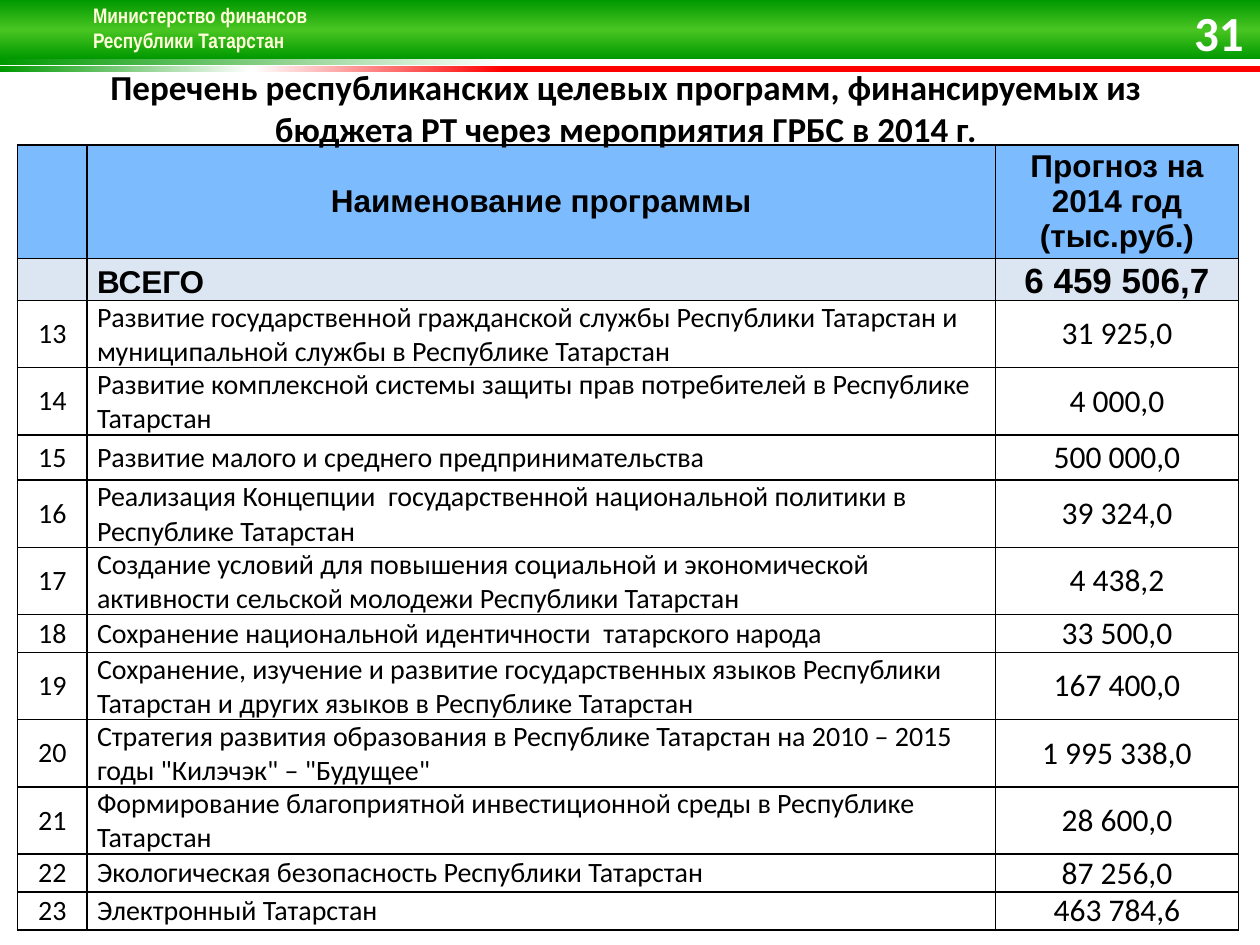
from lxml.etree import SubElement
from pptx import Presentation
from pptx.dml.color import RGBColor
from pptx.enum.shapes import MSO_SHAPE
from pptx.enum.text import MSO_ANCHOR, PP_ALIGN
from pptx.oxml import parse_xml
from pptx.oxml.ns import nsdecls, qn
from pptx.util import Inches, Pt

# Content
MINISTRY = "Министерство финансов\vРеспублики Татарстан"
TITLE = ("Перечень республиканских целевых программ, финансируемых из \v"
         "бюджета РТ через мероприятия ГРБС в 2014 г. ")
PAGE = "31"
HEADER = ("", "Наименование программы", "Прогноз на 2014 год (тыс.руб.)")
TOTAL = ("", "ВСЕГО", "6 459 506,7")
FIRST_NUMBER = 13
PROGRAMS = [  # name, forecast, row height
    ("Развитие государственной гражданской службы Республики Татарстан и "
     "муниципальной службы в Республике Татарстан", "31 925,0", 0.46),
    ("Развитие комплексной системы защиты прав потребителей в Республике Татарстан",
     "4 000,0", 0.46),
    ("Развитие малого и среднего предпринимательства", "500 000,0", 0.36),
    ("Реализация Концепции  государственной национальной политики в "
     "Республике Татарстан", "39 324,0", 0.46),
    ("Создание условий для повышения социальной и экономической активности "
     "сельской молодежи Республики Татарстан", "4 438,2", 0.46),
    ("Сохранение национальной идентичности  татарского народа", "33 500,0", 0.26),
    ("Сохранение, изучение и развитие государственных языков Республики "
     "Татарстан и других языков в Республике Татарстан", "167 400,0", 0.46),
    ("Стратегия развития образования в Республике Татарстан на 2010 – 2015 "
     "годы \"Килэчэк\" – \"Будущее\"", "1 995 338,0", 0.46),
    ("Формирование благоприятной инвестиционной среды в Республике Татарстан",
     "28 600,0", 0.46),
    ("Экологическая безопасность Республики Татарстан", "87 256,0", 0.26),
    ("Электронный Татарстан", "463 784,6", 0.26),
]
COL_WIDTHS = (0.55, 7.21, 1.93)
BANDS = [  # top, height, gradient stops, angle
    (0.47, 0.05, [(0, "FFFFFF"), (60, "FFFFFF"), (100, "009900")], 180),
    (0.52, 0.05, [(60, "FF0000"), (80, "FFFFFF"), (100, "009900")], 180),
    (0, 0.47, [(0, "009900"), (50, "49C522"), (100, "009900")], 90),
]

prs = Presentation()
prs.slide_width, prs.slide_height = Inches(10), Inches(7.5)
s = prs.slides.add_slide(prs.slide_layouts[6])


def rgb(value):
    return RGBColor.from_string(value)


def write(tf, text, size, font, color="000000", bold=False, align=PP_ALIGN.LEFT):
    tf.text = text
    p = tf.paragraphs[0]
    p.alignment = align
    for r in p.runs:
        f = r.font
        f.size, f.name, f.bold = Pt(size), font, bold
        f.color.rgb = rgb(color)
    return p


def add_text(left, top, width, height, *args, **kwargs):
    tf = s.shapes.add_textbox(*map(Inches, (left, top, width, height))).text_frame
    tf.word_wrap = True
    return tf, write(tf, *args, **kwargs)


def add_band(top, height, stops, angle):
    sp = s.shapes.add_shape(MSO_SHAPE.RECTANGLE, 0, Inches(top),
                            prs.slide_width, Inches(height))
    sp.shadow.inherit = False
    sp.line.fill.background()
    sp.fill.gradient()
    grad = sp.element.spPr.find(qn("a:gradFill"))
    gs_list = grad.find(qn("a:gsLst"))
    for gs in list(gs_list):
        gs_list.remove(gs)
    for position, color in stops:
        gs = SubElement(gs_list, qn("a:gs"), pos=str(position * 1000))
        SubElement(gs, qn("a:srgbClr"), val=color)
    grad.find(qn("a:lin")).set("ang", str(angle * 60000))


def add_borders(cell):
    tcPr = cell._tc.get_or_add_tcPr()
    for side in ("lnL", "lnR", "lnT", "lnB"):
        ln = SubElement(tcPr, qn(f"a:{side}"), w=str(Pt(1)))
        SubElement(SubElement(ln, qn("a:solidFill")), qn("a:srgbClr"), val="000000")


def fill_row(row, texts, sizes, aligns, font, bold=False, fill=None,
             anchor=MSO_ANCHOR.MIDDLE):
    for cell, text, size, align in zip(row.cells, texts, sizes, aligns):
        cell.margin_left = cell.margin_right = Inches(0.08)
        cell.margin_top = cell.margin_bottom = 0
        cell.vertical_anchor = anchor
        add_borders(cell)
        if fill:
            cell.fill.solid()
            cell.fill.fore_color.rgb = rgb(fill)
        else:
            cell.fill.background()
        write(cell.text_frame, text, size, font, bold=bold, align=align)


# Top bands with the ministry name
for band in BANDS:
    add_band(*band)
_, p = add_text(0.64, -0.03, 1.92, 0.71, MINISTRY, 12, "Arial Narrow", "FFFFD9", True)
for r in p.runs:
    r.font._element.find(qn("a:solidFill")).addnext(parse_xml(
        f'<a:effectLst {nsdecls("a")}><a:outerShdw blurRad="38100" dist="38100" '
        'dir="2700000"><a:srgbClr val="000000"><a:alpha val="43000"/></a:srgbClr>'
        '</a:outerShdw></a:effectLst>'))

# Table of programmes
heights = [0.9, 0.29] + [height for _, _, height in PROGRAMS]
table = s.shapes.add_table(len(heights), len(COL_WIDTHS), Inches(0.14), Inches(1.15),
                           Inches(sum(COL_WIDTHS)), Inches(sum(heights))).table
table.first_row = table.horz_banding = False
for column, width in zip(table.columns, COL_WIDTHS):
    column.width = Inches(width)
for row, height in zip(table.rows, heights):
    row.height = Inches(height)

C, L = PP_ALIGN.CENTER, PP_ALIGN.LEFT
rows = list(table.rows)
fill_row(rows[0], HEADER, (18, 18, 18), (C, C, C), "Arial", True, "7DBBFF")
fill_row(rows[1], TOTAL, (18, 18, 20), (C, L, C), "Arial", True, "DCE6F2",
         MSO_ANCHOR.BOTTOM)
for number, (row, (name, forecast, _)) in enumerate(zip(rows[2:], PROGRAMS), FIRST_NUMBER):
    fill_row(row, (str(number), name, forecast), (16, 16, 18), (C, L, C), "Calibri")

# Page number and title
tf, _ = add_text(9.03, 0.08, 0.94, 0.34, PAGE, 28, "Calibri", "FFFFFF", True,
                 PP_ALIGN.RIGHT)
tf.vertical_anchor = MSO_ANCHOR.MIDDLE
add_text(0, 0.47, 10, 0.77, TITLE, 20, "Calibri", bold=True, align=C)

prs.save("out.pptx")
